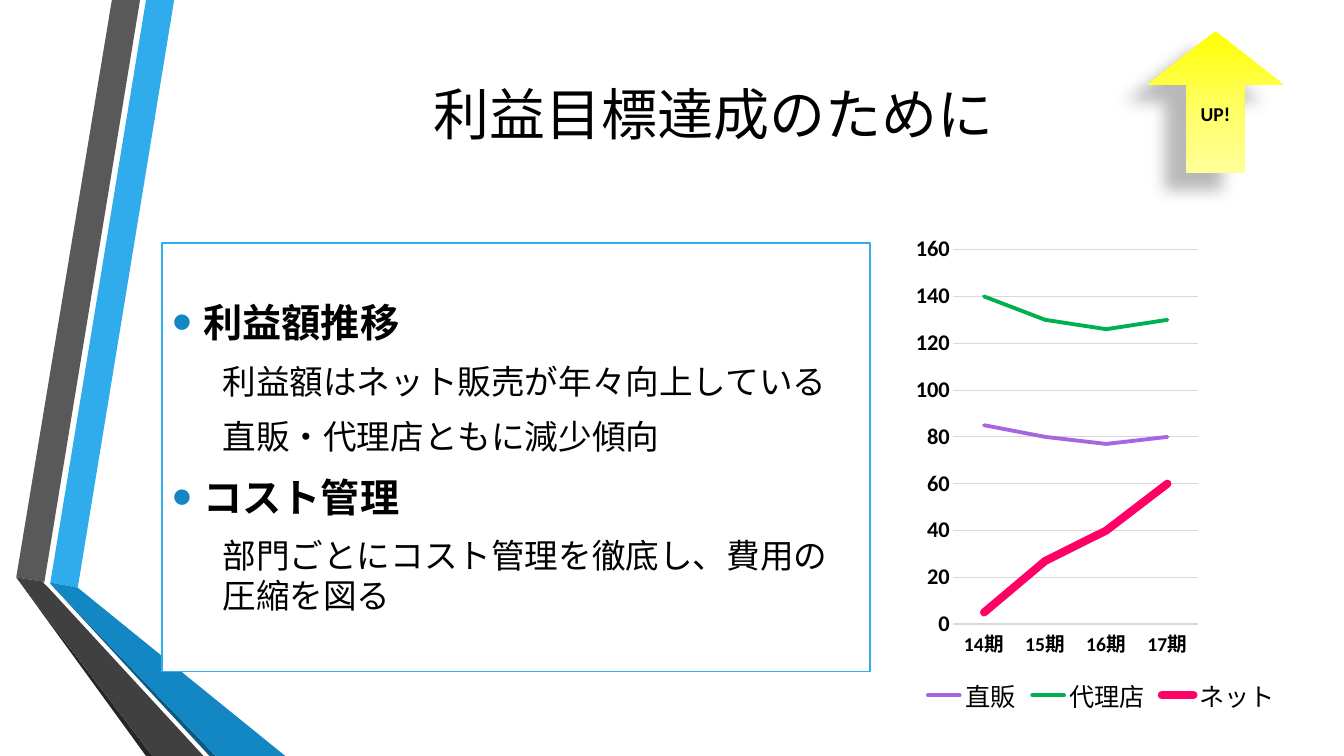
import pptx
import pptx.chart.data
import pptx.dml.color
import pptx.enum.chart
import pptx.enum.shapes
import pptx.enum.text
import pptx.oxml
import pptx.oxml.ns
import pptx.util
from dataclasses import dataclass

Cm = pptx.util.Cm
Pt = pptx.util.Pt
MSO_SHAPE = pptx.enum.shapes.MSO_SHAPE
PP_ALIGN = pptx.enum.text.PP_ALIGN
NS = pptx.oxml.ns.nsdecls("a")


@dataclass(frozen=True)
class Theme:
    latin: str = "Calibri"
    cjk: str = "Noto Sans CJK JP"
    text: str = "000000"
    paper: str = "FFFFFF"
    sky: str = "30ACEC"
    blue: str = "1287C3"
    navy: str = "0C5A82"
    gray: str = "595959"
    charcoal: str = "404040"
    black: str = "262626"
    grid: str = "D9D9D9"
    series: tuple = (("A666E1", 2.75), ("00B050", 2.75), ("FF0066", 5.75))
    arrow: tuple = ((0, "FFFF00"), (56, "FFFF66"), (100, "FFFF99"))
    title: int = 40
    heading: int = 28
    detail: int = 24
    legend: int = 18
    values: int = 16
    small: int = 14


THEME = Theme()

RIBBONS = (
    (THEME.sky, ((1.27, 14.68), (1.96, 14.81), (4.39, 0), (3.68, 0))),
    (THEME.gray, ((3.53, 0), (2.82, 0), (0.41, 14.55), (1.12, 14.66))),
    (THEME.black, ((0.41, 14.55), (3.68, 19.05), (3.84, 19.05))),
    (THEME.navy, ((1.27, 14.71), (5.28, 19.05), (5.44, 19.05))),
    (THEME.blue, ((1.27, 14.68), (1.27, 14.71), (5.44, 19.05), (7.19, 19.05), (1.96, 14.81))),
    (THEME.charcoal, ((5.13, 19.05), (1.22, 14.81), (1.09, 14.68), (1.12, 14.66),
                      (0.41, 14.55), (3.84, 19.05))),
)

OUTLINE = (
    ("利益額推移", ("利益額はネット販売が年々向上している", "直販・代理店ともに減少傾向")),
    ("コスト管理", ("部門ごとにコスト管理を徹底し、費用の圧縮を図る",)),
)

PERIODS = ("14期", "15期", "16期", "17期")
SALES = (("直販", (85, 80, 77, 80)), ("代理店", (140, 130, 126, 130)), ("ネット", (5, 27, 40, 60)))


def rgb(value):
    return pptx.dml.color.RGBColor.from_string(value)


def apply(obj, values):
    for name, value in values.items():
        setattr(obj, name, value)


def set_font(font, size, bold=False, name=THEME.latin):
    apply(font, {"size": Pt(size), "bold": bold, "name": name})
    font.color.rgb = rgb(THEME.text)


def set_fill(obj, color):
    obj.fill.solid()
    obj.fill.fore_color.rgb = rgb(color)


def set_line(line, color, width):
    line.color.rgb = rgb(color)
    line.width = Pt(width)


def set_frame(tf):
    apply(tf, {"word_wrap": True, "vertical_anchor": pptx.enum.text.MSO_ANCHOR.MIDDLE})


def add_run(p, text, size, bold=False, name=THEME.latin):
    r = p.add_run()
    r.text = text
    set_font(r.font, size, bold, name)
    return r


def add_ribbon(s, color, points):
    corners = [(Cm(x), Cm(y)) for x, y in points]
    builder = s.shapes.build_freeform(*corners[0], scale=1.0)
    builder.add_line_segments(corners[1:], close=True)
    sp = builder.convert_to_shape()
    sp.shadow.inherit = False
    set_fill(sp, color)
    sp.line.fill.background()


def add_title(s, text):
    tf = s.shapes.add_textbox(Cm(4.06), Cm(0.41), Cm(27.84), Cm(4.88)).text_frame
    set_frame(tf)
    p = tf.paragraphs[0]
    p.alignment = PP_ALIGN.CENTER
    r = add_run(p, text, THEME.title, name=THEME.cjk)
    r.font._element.append(pptx.oxml.parse_xml(f'<a:ea {NS} typeface="{THEME.cjk}"/>'))


def add_up_arrow(s, text):
    sp = s.shapes.add_shape(MSO_SHAPE.UP_ARROW, Cm(28.93), Cm(0.79), Cm(3.4), Cm(3.56))
    sp.adjustments[0], sp.adjustments[1] = 0.428, 0.393
    sp.shadow.inherit = False
    sp.line.fill.background()
    sp.fill.gradient()
    stops = "".join(f'<a:gs pos="{pos * 1000}"><a:srgbClr val="{color}"/></a:gs>'
                    for pos, color in THEME.arrow)
    gradient = pptx.oxml.parse_xml(
        f'<a:gradFill {NS} rotWithShape="1"><a:gsLst>{stops}</a:gsLst>'
        '<a:lin ang="5400000" scaled="0"/></a:gradFill>')
    props = sp._element.spPr
    props.replace(props.find(pptx.oxml.ns.qn("a:gradFill")), gradient)
    props.find(pptx.oxml.ns.qn("a:effectLst")).append(pptx.oxml.parse_xml(
        f'<a:outerShdw {NS} blurRad="{Pt(11.8)}" dist="{Pt(19.7)}" dir="{141 * 60000}" '
        f'rotWithShape="0"><a:srgbClr val="{THEME.text}"><a:alpha val="28000"/>'
        '</a:srgbClr></a:outerShdw>'))
    set_frame(sp.text_frame)
    p = sp.text_frame.paragraphs[0]
    p.alignment = PP_ALIGN.CENTER
    add_run(p, text, THEME.small, True)


def add_point(p, text, size, heading, first):
    props = p._p.get_or_add_pPr()
    indent = Cm(0.79) if heading else 0
    apply_indent = {"marL": indent or Cm(1.27), "indent": -indent}
    for name, value in apply_indent.items():
        props.set(name, str(value))
    if heading:
        for xml in (f'<a:buClr {NS}><a:srgbClr val="{THEME.blue}"/></a:buClr>',
                    f'<a:buSzPct {NS} val="145000"/>',
                    f'<a:buFont {NS} typeface="Arial"/>',
                    f'<a:buChar {NS} char="•"/>'):
            props.append(pptx.oxml.parse_xml(xml))
    apply(p, {"alignment": PP_ALIGN.LEFT, "level": 0 if heading else 1,
              "space_before": Pt(0 if first else size * 0.2), "space_after": Pt(6)})
    add_run(p, text, size, heading)


def add_outline(s, outline):
    sp = s.shapes.add_shape(MSO_SHAPE.RECTANGLE, Cm(4.09), Cm(6.12), Cm(17.83), Cm(10.8))
    sp.shadow.inherit = False
    set_fill(sp, THEME.paper)
    set_line(sp.line, THEME.sky, 1.25)
    tf = sp.text_frame
    set_frame(tf)
    p = tf.paragraphs[0]
    for heading, details in outline:
        first = heading == outline[0][0]
        p = p if first else tf.add_paragraph()
        add_point(p, heading, THEME.heading, True, first)
        for detail in details:
            add_point(tf.add_paragraph(), detail, THEME.detail, False, False)


def add_sales_chart(s):
    data = pptx.chart.data.CategoryChartData()
    data.categories = PERIODS
    for name, values in SALES:
        data.add_series(name, values)
    chart = s.shapes.add_chart(pptx.enum.chart.XL_CHART_TYPE.LINE, Cm(21.95), Cm(5.59),
                               Cm(11.61), Cm(12.52), data).chart
    apply(chart, {"has_title": False, "has_legend": True})
    set_font(chart.font, 10)
    apply(chart.legend, {"position": pptx.enum.chart.XL_LEGEND_POSITION.BOTTOM,
                         "include_in_layout": False})
    set_font(chart.legend.font, THEME.legend)
    for axis, size in ((chart.category_axis, THEME.small), (chart.value_axis, THEME.values)):
        axis.major_tick_mark = pptx.enum.chart.XL_TICK_MARK.NONE
        set_font(axis.tick_labels.font, size, True)
    set_line(chart.category_axis.format.line, THEME.grid, 1)
    apply(chart.value_axis, {"minimum_scale": 0, "maximum_scale": 160, "major_unit": 20})
    chart.value_axis.format.line.fill.background()
    set_line(chart.value_axis.major_gridlines.format.line, THEME.grid, 0.75)
    chart.plots[0].vary_by_categories = False
    for series, (color, width) in zip(chart.plots[0].series, THEME.series):
        series.smooth = False
        series.marker.style = pptx.enum.chart.XL_MARKER_STYLE.NONE
        set_line(series.format.line, color, width)
        series.format.line._get_or_add_ln().set("cap", "rnd")
    area = chart._chartSpace.chart.plotArea
    for layout in area.findall(pptx.oxml.ns.qn("c:layout")):
        area.remove(layout)
    frame = {"layoutTarget": "inner", "xMode": "edge", "yMode": "edge",
             "x": 0.179, "y": 0.056, "w": 0.531, "h": 0.754}
    parts = "".join(f'<c:{name} val="{value}"/>' for name, value in frame.items())
    area.insert(0, pptx.oxml.parse_xml(
        f'<c:layout {pptx.oxml.ns.nsdecls("c")}><c:manualLayout>{parts}</c:manualLayout></c:layout>'))


def main():
    prs = pptx.Presentation()
    apply(prs, {"slide_width": Cm(33.87), "slide_height": Cm(19.05)})
    s = prs.slides.add_slide(prs.slide_layouts[6])
    for color, points in RIBBONS:
        add_ribbon(s, color, points)
    add_title(s, "利益目標達成のために")
    add_up_arrow(s, "UP!")
    add_outline(s, OUTLINE)
    add_sales_chart(s)
    prs.save("out.pptx")


if __name__ == "__main__":
    main()
